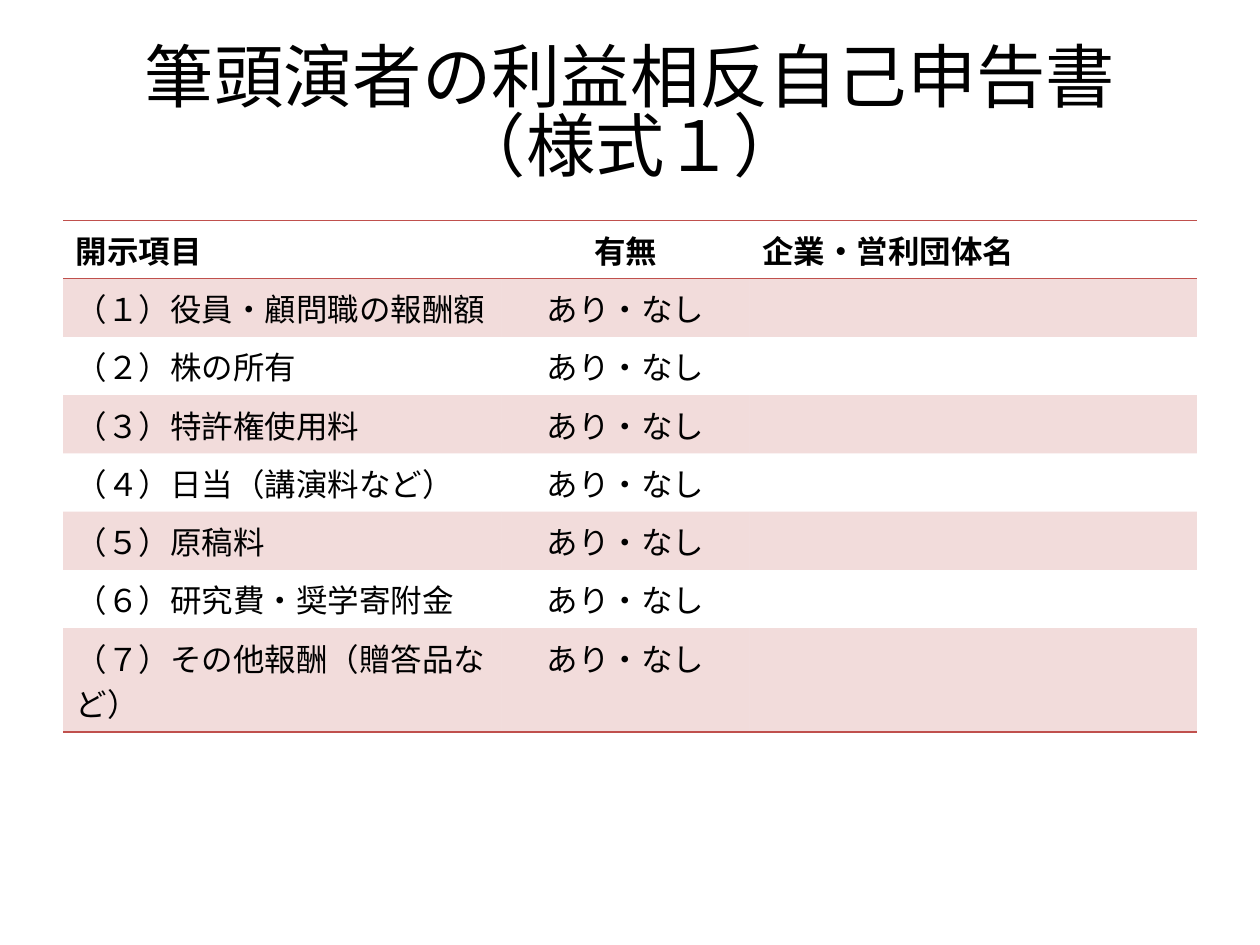
import dataclasses

import pptx
import pptx.dml.color
import pptx.enum.text
import pptx.oxml
import pptx.oxml.ns
import pptx.util

Inches = pptx.util.Inches
Pt = pptx.util.Pt
RGB = pptx.dml.color.RGBColor
Align = pptx.enum.text.PP_ALIGN
Anchor = pptx.enum.text.MSO_ANCHOR
qn = pptx.oxml.ns.qn


@dataclasses.dataclass(frozen=True)
class Theme:
    font: str = "Calibri"
    ink: str = "000000"
    paper: str = "FFFFFF"
    accent: str = "C0504D"
    band_opacity: int = 20
    title_size: float = 39.6
    body_size: float = 18
    rule_width: float = 1


THEME = Theme()
SLIDE_WIDTH, SLIDE_HEIGHT = 10, 7.5
MARGIN = 0.05 * SLIDE_WIDTH
CONTENT_WIDTH = SLIDE_WIDTH - 2 * MARGIN
PLAIN_TABLE_STYLE = "{2D5ABB26-0587-4C30-8999-92F81FD0307C}"

TITLE_LINES = ["筆頭演者の利益相反自己申告書", "（様式１）"]
HEADINGS = ["開示項目", "有無", "企業・営利団体名"]
DISCLOSURES = [
    "（１）役員・顧問職の報酬額",
    "（２）株の所有",
    "（３）特許権使用料",
    "（４）日当（講演料など）",
    "（５）原稿料",
    "（６）研究費・奨学寄附金",
    "（７）その他報酬（贈答品など）",
]
ANSWER = "あり・なし"
COLUMN_WIDTHS = [3.48, 1.97, 3.55]
COLUMN_ALIGNS = [Align.LEFT, Align.CENTER, Align.LEFT]
ROW_HEIGHT = 0.41


def add_run(paragraph, text, size, bold=False):
    run = paragraph.add_run()
    run.text = text
    run.font.name = THEME.font
    run.font.size = Pt(size)
    run.font.bold = bold
    run.font.color.rgb = RGB.from_string(THEME.ink)


def fill_title(title):
    title.left, title.top = Inches(MARGIN), Inches(0.04 * SLIDE_HEIGHT)
    title.width, title.height = Inches(CONTENT_WIDTH), Inches(1.25)
    frame = title.text_frame
    frame.word_wrap = True
    frame.auto_size = pptx.enum.text.MSO_AUTO_SIZE.NONE
    frame.vertical_anchor = Anchor.MIDDLE
    heading = frame.paragraphs[0]
    heading.alignment = Align.CENTER
    heading.line_spacing = 0.83
    for index, line in enumerate(TITLE_LINES):
        if index:
            heading.add_line_break()
        add_run(heading, line, THEME.title_size)


def add_rule(cell, edge):
    rule = pptx.oxml.parse_xml(
        f'<a:{edge} {pptx.oxml.ns.nsdecls("a")} w="{Pt(THEME.rule_width)}">'
        f'<a:solidFill><a:srgbClr val="{THEME.accent}"/></a:solidFill></a:{edge}>'
    )
    cell._tc.get_or_add_tcPr().append(rule)


def fill_band(cell):
    cell.fill.solid()
    cell.fill.fore_color.rgb = RGB.from_string(THEME.accent)
    color = cell._tc.tcPr.find(qn("a:solidFill")).find(qn("a:srgbClr"))
    alpha = color.makeelement(qn("a:alpha"), {"val": str(THEME.band_opacity * 1000)})
    color.append(alpha)


def format_cell(cell, text, align, edges, banded, bold):
    for edge in edges:
        add_rule(cell, edge)
    if banded:
        fill_band(cell)
    else:
        cell.fill.background()
    paragraph = cell.text_frame.paragraphs[0]
    paragraph.alignment = align
    if text:
        add_run(paragraph, text, THEME.body_size, bold)
    else:
        paragraph.font.size = Pt(THEME.body_size)


def add_disclosure_table(slide):
    entries = [HEADINGS] + [[item, ANSWER, ""] for item in DISCLOSURES]
    frame = slide.shapes.add_table(
        len(entries), len(HEADINGS), Inches(MARGIN), Inches(1.75),
        Inches(CONTENT_WIDTH), Inches(ROW_HEIGHT * len(entries)),
    )
    table = frame.table
    table.horz_banding = False
    table._tbl.tblPr.find(qn("a:tableStyleId")).text = PLAIN_TABLE_STYLE
    for column, width in zip(table.columns, COLUMN_WIDTHS):
        column.width = Inches(width)
    edges_by_row = {0: ["lnT", "lnB"], len(entries) - 1: ["lnB"]}
    for row, texts in enumerate(entries):
        table.rows[row].height = Inches(ROW_HEIGHT)
        for column, (text, align) in enumerate(zip(texts, COLUMN_ALIGNS)):
            format_cell(
                table.cell(row, column), text, align,
                edges_by_row.get(row, []), banded=row % 2 == 1, bold=row == 0,
            )


def main():
    deck = pptx.Presentation()
    deck.slide_width = Inches(SLIDE_WIDTH)
    deck.slide_height = Inches(SLIDE_HEIGHT)
    slide = deck.slides.add_slide(deck.slide_layouts[5])
    slide.background.fill.solid()
    slide.background.fill.fore_color.rgb = RGB.from_string(THEME.paper)
    fill_title(slide.shapes.title)
    add_disclosure_table(slide)
    deck.save("out.pptx")


if __name__ == "__main__":
    main()
